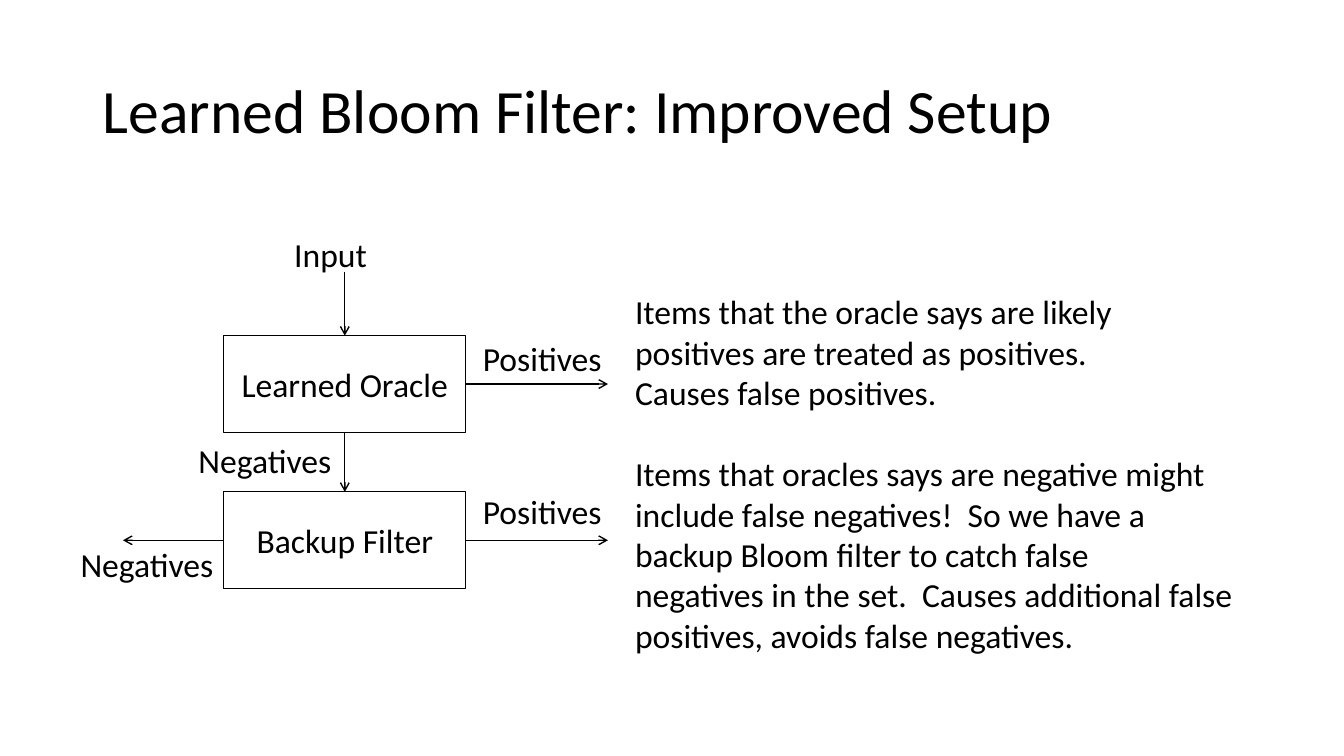
from dataclasses import dataclass

from lxml import etree
from pptx import Presentation
from pptx.dml.color import RGBColor
from pptx.enum.shapes import MSO_CONNECTOR, MSO_SHAPE
from pptx.enum.text import MSO_ANCHOR, MSO_AUTO_SIZE, PP_ALIGN
from pptx.oxml.ns import qn
from pptx.util import Inches, Pt

RECTANGLE = MSO_SHAPE.RECTANGLE
STRAIGHT = MSO_CONNECTOR.STRAIGHT
MIDDLE, TOP_ANCHOR = MSO_ANCHOR.MIDDLE, MSO_ANCHOR.TOP
LEFT_ALIGN, CENTER = PP_ALIGN.LEFT, PP_ALIGN.CENTER
NO_FIT, GROW = MSO_AUTO_SIZE.NONE, MSO_AUTO_SIZE.SHAPE_TO_FIT_TEXT
TITLE_ONLY = 5
TOP, LEFT, BOTTOM, RIGHT = range(4)  # connection sites of a rectangle


@dataclass(frozen=True)
class Theme:
    font: str = "Calibri"
    ink: RGBColor = RGBColor(0, 0, 0)
    title_size: Pt = Pt(44)
    text_size: Pt = Pt(24)
    paragraph_gap: Pt = Pt(29.3)
    box_line: Pt = Pt(0.5)
    arrow_line: Pt = Pt(1)


THEME = Theme()

# Flow diagram measures, in inches
BOX_LEFT, BOX_WIDTH, BOX_HEIGHT = 2.22, 2.4, 0.96
ORACLE_TOP, BACKUP_TOP = 3.33, 4.88
LABEL_HEIGHT = 0.5
AXIS = BOX_LEFT + BOX_WIDTH / 2

LABELS = [
    ("Input", 2.82, 2.27, 1.2),
    ("Positives", 4.69, 3.3, 1.79),
    ("Negatives", 1.87, 4.32, 1.97),
    ("Positives", 4.69, 4.82, 1.79),
    ("Negatives", 0.7, 5.35, 1.55),
]

# Each block is a list of paragraphs; a gap separates the blocks
EXPLANATION = [
    [
        "Items that the oracle says are likely",
        "positives are treated as positives.",
        "Causes false positives.",
    ],
    [
        "Items that oracles says are negative might include false negatives!  So we have a",
        "backup Bloom filter to catch false",
        "negatives in the set.  Causes additional false positives, avoids false negatives.",
    ],
]


def apply_format(target, values):
    for name, value in values.items():
        setattr(target, name, value)


def write_paragraph(para, text, size=THEME.text_size, **para_format):
    apply_format(para, para_format)
    span = para.add_run()
    span.text = text
    apply_format(span.font, {"name": THEME.font, "size": size})
    span.font.color.rgb = THEME.ink


def add_title(page, text):
    title = page.shapes.title
    apply_format(title, {
        "left": Inches(0.92), "top": Inches(0.4),
        "width": Inches(11.5), "height": Inches(1.45),
    })
    apply_format(title.text_frame, {
        "word_wrap": True, "auto_size": NO_FIT, "vertical_anchor": MIDDLE,
    })
    write_paragraph(title.text_frame.paragraphs[0], text, THEME.title_size,
                    alignment=LEFT_ALIGN, line_spacing=0.9)


def add_box(page, text, top):
    box = page.shapes.add_shape(RECTANGLE, Inches(BOX_LEFT), Inches(top),
                                Inches(BOX_WIDTH), Inches(BOX_HEIGHT))
    box.shadow.inherit = False
    box.fill.background()
    box.line.color.rgb = THEME.ink
    box.line.width = THEME.box_line
    apply_format(box.text_frame, {"word_wrap": True, "vertical_anchor": MIDDLE})
    write_paragraph(box.text_frame.paragraphs[0], text, alignment=CENTER)
    return box


def add_text(page, blocks, left, top, width, height):
    box = page.shapes.add_textbox(Inches(left), Inches(top), Inches(width), Inches(height))
    frame = box.text_frame
    apply_format(frame, {
        "word_wrap": True, "auto_size": GROW, "vertical_anchor": TOP_ANCHOR,
    })
    for block_number, block in enumerate(blocks):
        for line_number, text in enumerate(block):
            first = block_number == line_number == 0
            para = frame.paragraphs[0] if first else frame.add_paragraph()
            starts_block = block_number > 0 and line_number == 0
            write_paragraph(para, text, alignment=LEFT_ALIGN,
                            space_before=THEME.paragraph_gap if starts_block else Pt(0))


def add_arrow(page, start, end, source=None, target=None):
    """Draw an arrow; source and target are (box, site) pairs to join."""
    arrow = page.shapes.add_connector(STRAIGHT, *(Inches(value) for value in start + end))
    if source:
        arrow.begin_connect(*source)
    if target:
        arrow.end_connect(*target)
    arrow.line.color.rgb = THEME.ink
    arrow.line.width = THEME.arrow_line
    etree.SubElement(arrow.line._get_or_add_ln(), qn("a:tailEnd"), type="arrow")
    etree.SubElement(arrow._element.spPr, qn("a:effectLst"))


def main():
    deck = Presentation()
    deck.slide_width, deck.slide_height = Inches(13.33), Inches(7.5)
    page = deck.slides.add_slide(deck.slide_layouts[TITLE_ONLY])
    add_title(page, "Learned Bloom Filter: Improved Setup")

    # Filter stages
    oracle = add_box(page, "Learned Oracle", ORACLE_TOP)
    backup = add_box(page, "Backup Filter", BACKUP_TOP)

    # Flow from the input down through both stages
    add_arrow(page, (AXIS, 2.7), (AXIS, ORACLE_TOP), target=(oracle, TOP))
    add_arrow(page, (AXIS, ORACLE_TOP + BOX_HEIGHT), (AXIS, BACKUP_TOP),
              source=(oracle, BOTTOM), target=(backup, TOP))

    # Results leaving each stage
    box_right = BOX_LEFT + BOX_WIDTH
    for box, top in ((oracle, ORACLE_TOP), (backup, BACKUP_TOP)):
        middle = top + BOX_HEIGHT / 2
        add_arrow(page, (box_right, middle), (6.03, middle), source=(box, RIGHT))
    middle = BACKUP_TOP + BOX_HEIGHT / 2
    add_arrow(page, (BOX_LEFT, middle), (1.22, middle), source=(backup, LEFT))

    # Labels and explanation
    for text, left, top, width in LABELS:
        add_text(page, [[text]], left, top, width, LABEL_HEIGHT)
    add_text(page, EXPLANATION, 6.2, 2.84, 6.41, 3.74)

    deck.save("out.pptx")


if __name__ == "__main__":
    main()
